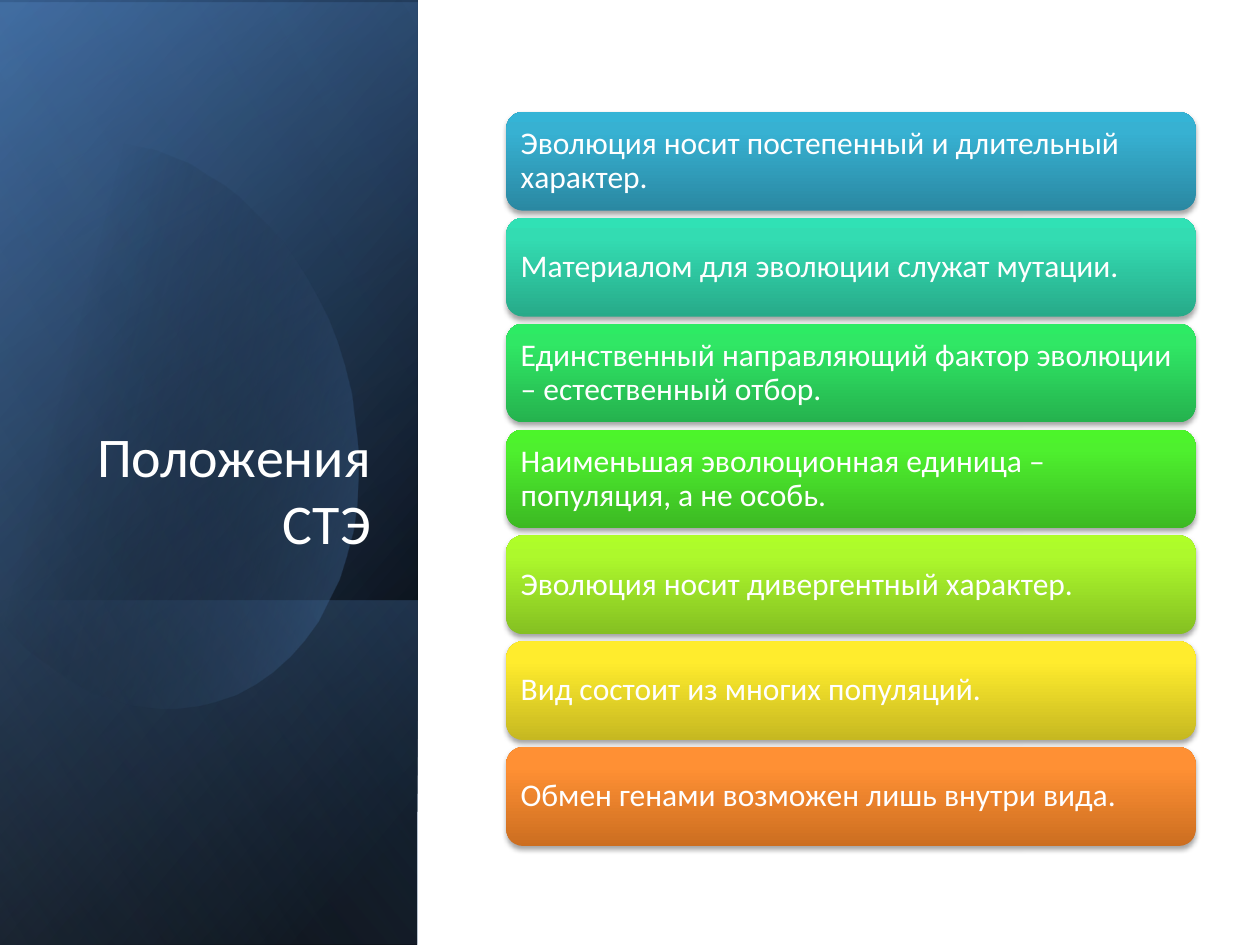
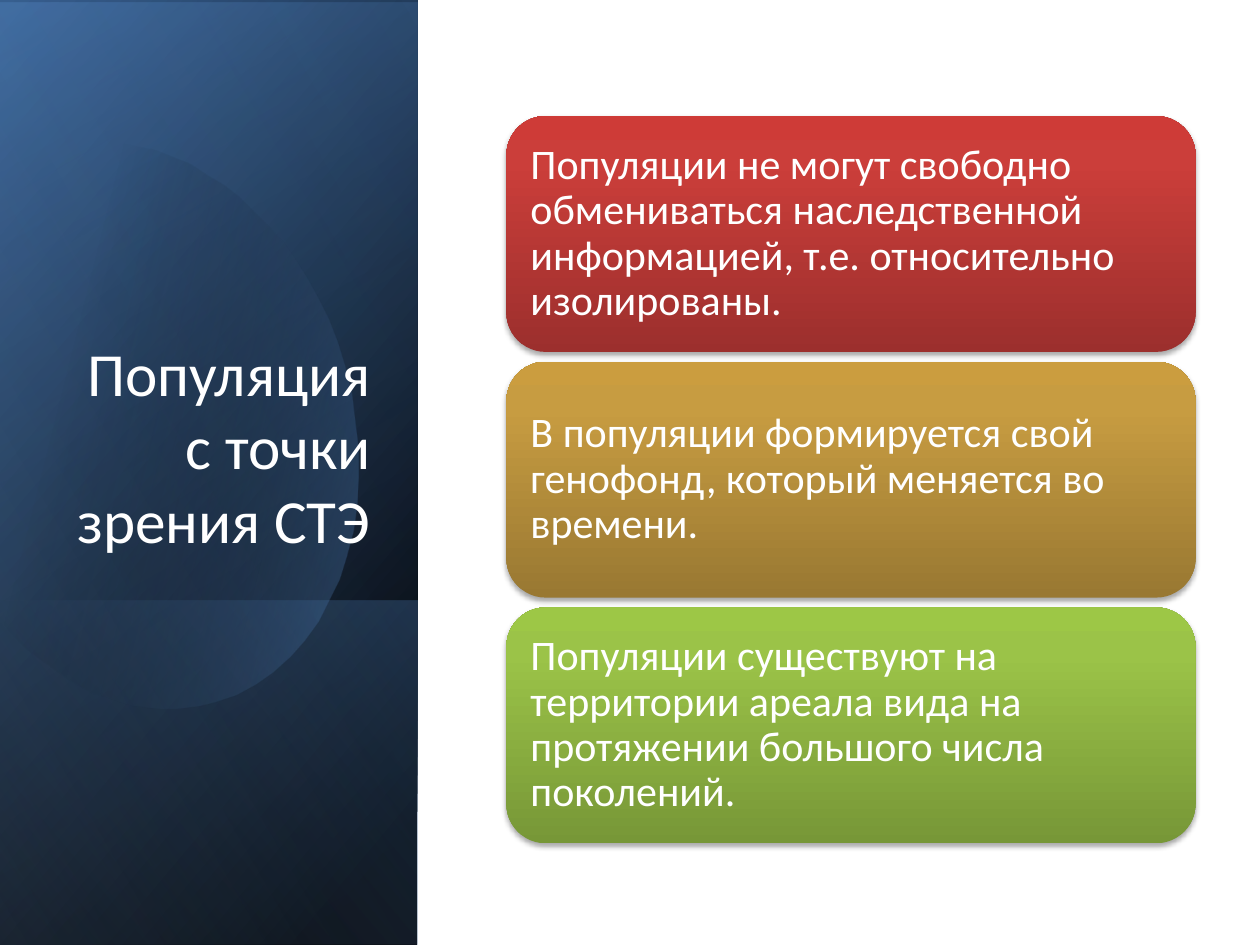
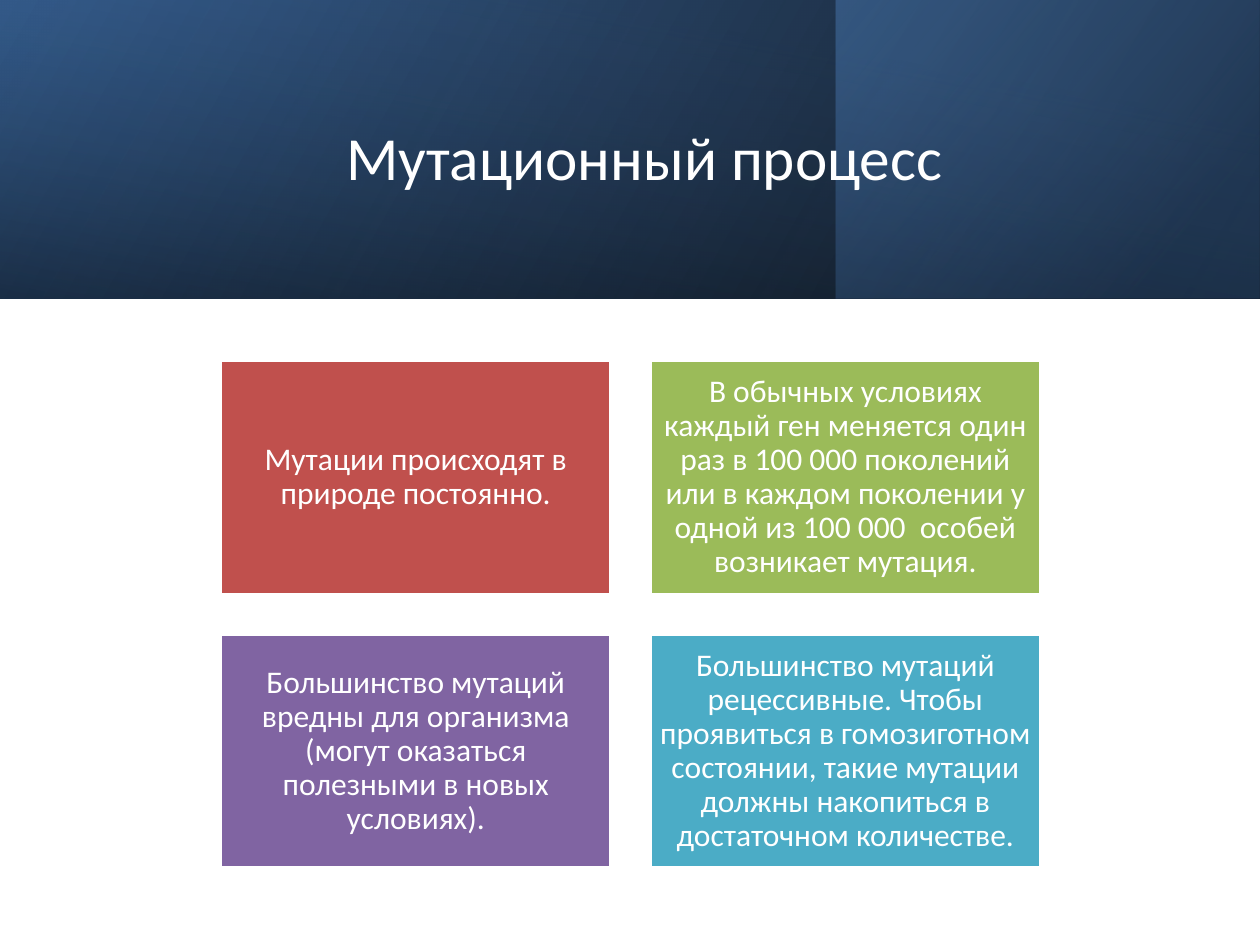
from lxml import etree
from pptx import Presentation
from pptx.dml.color import RGBColor
from pptx.enum import shapes, text
from pptx.oxml import ns
from pptx.util import Pt

COLORS = {
    "white": "FFFFFF", "black": "000000", "navy": "254061", "deep": "376092",
    "blue": "4F81BD", "pale": "95B3D7", "red": "C0504D", "green": "9BBB59",
    "purple": "8064A2", "aqua": "4BACC6",
}
FONT = "Calibri"

# Bands: visible box, rotation, gradient stops (position, colour, opacity), angle
SIDE_BANDS = [
    ((0, 0, 238.6, 540), 90, [(8, "black", 100), (100, "deep", 100)], 50),
    ((0, 1.5, 238.6, 540), 90, [(0, "black", 0), (99, "blue", 46)], 30),
    ((0, 343, 238.6, 197), 90, [(2, "blue", 29), (100, "black", 30)], 130),
]
SIDE_SHEEN = ((0, 0, 238.6, 540), 90, [(0, "black", 0), (99, "pale", 11)], 120)
TOP_BANDS = [
    ((0, 0, 720, 170.6), 0, [(0, "black", 96), (100, "deep", 100)], 330),
    ((477.5, 0, 242, 170.6), 0, [(19, "navy", 68), (100, "blue", 48)], 320),
    ((0, 0, 720, 170.6), 270, [(23, "deep", 16), (99, "black", 45)], 350),
]

# Egg outline: start point, then segments of one point (line) or three (curve)
EGG_START = (69, 82)
EGG_SEGMENTS = [
    [(123, 88), (176, 138), (197, 209)],
    [(221, 297), (189, 382), (123, 401)],
    [(82, 413), (38, 396), (5, 360)],
    [(-2, 351)], [(-18, 120)], [(-11, 111)],
    [(1, 99), (16, 90), (32, 85)],
    [(45, 81), (57, 81), (69, 82)],
]
EGG_STOPS, EGG_ANGLE = [(29, "black", 0), (100, "blue", 43)], 14

# Card: text, then gradient colours from bottom to top
CARD_SLIDES = [
    {"title": "Положения СТЭ", "title_size": 32, "size": 18,
     "top": 64, "height": 56.4, "gap": 4.1,
     "cards": [
         ("Эволюция носит постепенный и длительный характер.", "2A88A2", "37B1D2", "34B4D6"),
         ("Материалом для эволюции служат мутации.", "27AA89", "33DCB2", "30E1B5"),
         ("Единственный направляющий фактор эволюции – естественный отбор.",
          "25B24E", "30E765", "2DEB64"),
         ("Наименьшая эволюционная единица – популяция, а не особь.",
          "3CB923", "4EF02E", "4CF52A"),
         ("Эволюция носит дивергентный характер.", "85C022", "ADF92C", "AFFE28"),
         ("Вид состоит из многих популяций.", "C6B821", "FFEC2D", "FFED2E"),
         ("Обмен генами возможен лишь внутри вида.", "CC6E20", "FF9034", "FF9136"),
     ]},
    {"title": "Популяция с точки зрения СТЭ", "title_size": 35, "size": 24,
     "top": 66.3, "height": 134.8, "gap": 5.6,
     "cards": [
         ("Популяции не могут свободно обмениваться наследственной информацией, "
          "т.е. относительно изолированы.", "9C2F2D", "CB3E3A", "CE3B37"),
         ("В популяции формируется свой генофонд, который меняется во времени.",
          "997832", "C79C41", "CB9D3F"),
         ("Популяции существуют на территории ареала вида на протяжении "
          "большого числа поколений.", "779737", "9BC348", "9DC746"),
     ]},
]
MUTATION_TITLE = "Мутационный процесс"
MUTATION_BLOCKS = [
    ("Мутации происходят в природе постоянно.", "red"),
    ("В обычных условиях каждый ген меняется один раз в 100 000 поколений или в каждом "
     "поколении у одной из 100 000  особей возникает мутация.", "green"),
    ("Большинство мутаций вредны для организма (могут оказаться полезными в новых условиях).",
     "purple"),
    ("Большинство мутаций рецессивные. Чтобы проявиться в гомозиготном состоянии, такие "
     "мутации должны накопиться в достаточном количестве.", "aqua"),
]

CARD_LEFT, CARD_WIDTH = 289.4, 393.8
BLOCK_LEFT, BLOCK_TOP, BLOCK_WIDTH, BLOCK_HEIGHT = 126, 206, 223.2, 133.9
BLOCK_GAP = 0.1 * BLOCK_WIDTH


def color(name):
    return RGBColor.from_string(COLORS[name])


def set_all(target, values):
    for name, value in values.items():
        setattr(target, name, value)


def add_element(parent, tag, **attributes):
    return etree.SubElement(parent, ns.qn(tag), attributes)


def add_color(parent, name, opacity):
    node = add_element(parent, "a:srgbClr", val=COLORS.get(name, name))
    if opacity < 100:
        add_element(node, "a:alpha", val=str(opacity * 1000))


# Fills and shapes
def paint_gradient(shape, stops, angle):
    shape.shadow.inherit = False
    shape.line.fill.background()
    shape.fill.gradient()
    gradient = shape.element.spPr.find(ns.qn("a:gradFill"))
    for child in list(gradient):
        gradient.remove(child)
    gradient.set("rotWithShape", "1")
    stop_list = add_element(gradient, "a:gsLst")
    for position, name, opacity in stops:
        add_color(add_element(stop_list, "a:gs", pos=str(position * 1000)), name, opacity)
    add_element(gradient, "a:lin", ang=str(angle * 60000), scaled="0")


def add_preset(slide, kind, left, top, width, height):
    return slide.shapes.add_shape(kind, Pt(left), Pt(top), Pt(width), Pt(height))


def add_band(slide, box, rotation, stops, angle):
    left, top, width, height = box
    center_x, center_y = left + width / 2, top + height / 2
    if rotation in (90, 270):
        width, height = height, width
    band = add_preset(slide, shapes.MSO_SHAPE.RECTANGLE,
                      center_x - width / 2, center_y - height / 2, width, height)
    band.rotation = rotation
    band.element.spPr.get_or_add_xfrm().set("flipH", "1")
    paint_gradient(band, stops, angle)


def curve_points(points, steps=16):
    for step in range(1, steps + 1):
        t = step / steps
        weights = ((1 - t) ** 3, 3 * t * (1 - t) ** 2, 3 * t * t * (1 - t), t ** 3)
        yield tuple(sum(weight * point[axis] for weight, point in zip(weights, points))
                    for axis in (0, 1))


def add_egg(slide):
    outline = [EGG_START]
    for segment in EGG_SEGMENTS:
        outline += segment if len(segment) == 1 else list(curve_points([outline[-1], *segment]))
    builder = slide.shapes.build_freeform(*EGG_START, scale=float(Pt(1)))
    builder.add_line_segments(outline[1:], close=True)
    paint_gradient(builder.convert_to_shape(), EGG_STOPS, EGG_ANGLE)


# Text
def write(shape, words, size, align, anchor, margins=(7.2, 3.6), spacing=1.0):
    frame = shape.text_frame
    side, edge = map(Pt, margins)
    set_all(frame, {"word_wrap": True, "vertical_anchor": anchor, "margin_left": side,
                    "margin_right": side, "margin_top": edge, "margin_bottom": edge})
    paragraph = frame.paragraphs[0]
    set_all(paragraph, {"alignment": align, "line_spacing": spacing})
    run = paragraph.add_run()
    run.text = words
    set_all(run.font, {"name": FONT, "size": Pt(size)})
    run.font.color.rgb = color("white")


def write_body(shape, words, size, align):
    write(shape, words, size, align, text.MSO_ANCHOR.MIDDLE, (0.3 * size, 0.3 * size), 0.9)


def add_title(slide, words, size, box, align, anchor):
    title = slide.shapes.add_textbox(*map(Pt, box))
    write(title, words, size, align, anchor)


# Slides
def add_card_slide(slide, content):
    for band in SIDE_BANDS:
        add_band(slide, *band)
    add_egg(slide)
    add_band(slide, *SIDE_SHEEN)
    add_title(slide, content["title"], content["title_size"], (34.5, 132.5, 184.5, 188.6),
              text.PP_ALIGN.RIGHT, text.MSO_ANCHOR.BOTTOM)
    for row, (words, bottom, middle, top) in enumerate(content["cards"]):
        card_top = content["top"] + row * (content["height"] + content["gap"])
        card = add_preset(slide, shapes.MSO_SHAPE.ROUNDED_RECTANGLE,
                          CARD_LEFT, card_top, CARD_WIDTH, content["height"])
        paint_gradient(card, [(0, bottom, 100), (80, middle, 100), (100, top, 100)], 270)
        effects = card.element.spPr.find(ns.qn("a:effectLst"))
        shadow = add_element(effects, "a:outerShdw", blurRad=str(Pt(3.1)), dist=str(Pt(1.8)),
                             dir="5400000", rotWithShape="0")
        add_color(shadow, "black", 35)
        write_body(card, words, content["size"], text.PP_ALIGN.LEFT)


def add_block_slide(slide):
    for band in TOP_BANDS:
        add_band(slide, *band)
    add_title(slide, MUTATION_TITLE, 35, (81.4, 27.4, 573.8, 123.8),
              text.PP_ALIGN.CENTER, text.MSO_ANCHOR.MIDDLE)
    for index, (words, fill) in enumerate(MUTATION_BLOCKS):
        row, column = divmod(index, 2)
        block = add_preset(slide, shapes.MSO_SHAPE.RECTANGLE,
                           BLOCK_LEFT + column * (BLOCK_WIDTH + BLOCK_GAP),
                           BLOCK_TOP + row * (BLOCK_HEIGHT + BLOCK_GAP),
                           BLOCK_WIDTH, BLOCK_HEIGHT)
        block.shadow.inherit = False
        block.fill.solid()
        block.fill.fore_color.rgb = color(fill)
        block.line.color.rgb = color("white")
        block.line.width = Pt(2)
        write_body(block, words, 18, text.PP_ALIGN.CENTER)


def main():
    presentation = Presentation()
    set_all(presentation, {"slide_width": Pt(720), "slide_height": Pt(540)})
    blank = presentation.slide_layouts[6]
    for content in CARD_SLIDES:
        add_card_slide(presentation.slides.add_slide(blank), content)
    add_block_slide(presentation.slides.add_slide(blank))
    presentation.save("out.pptx")


if __name__ == "__main__":
    main()
